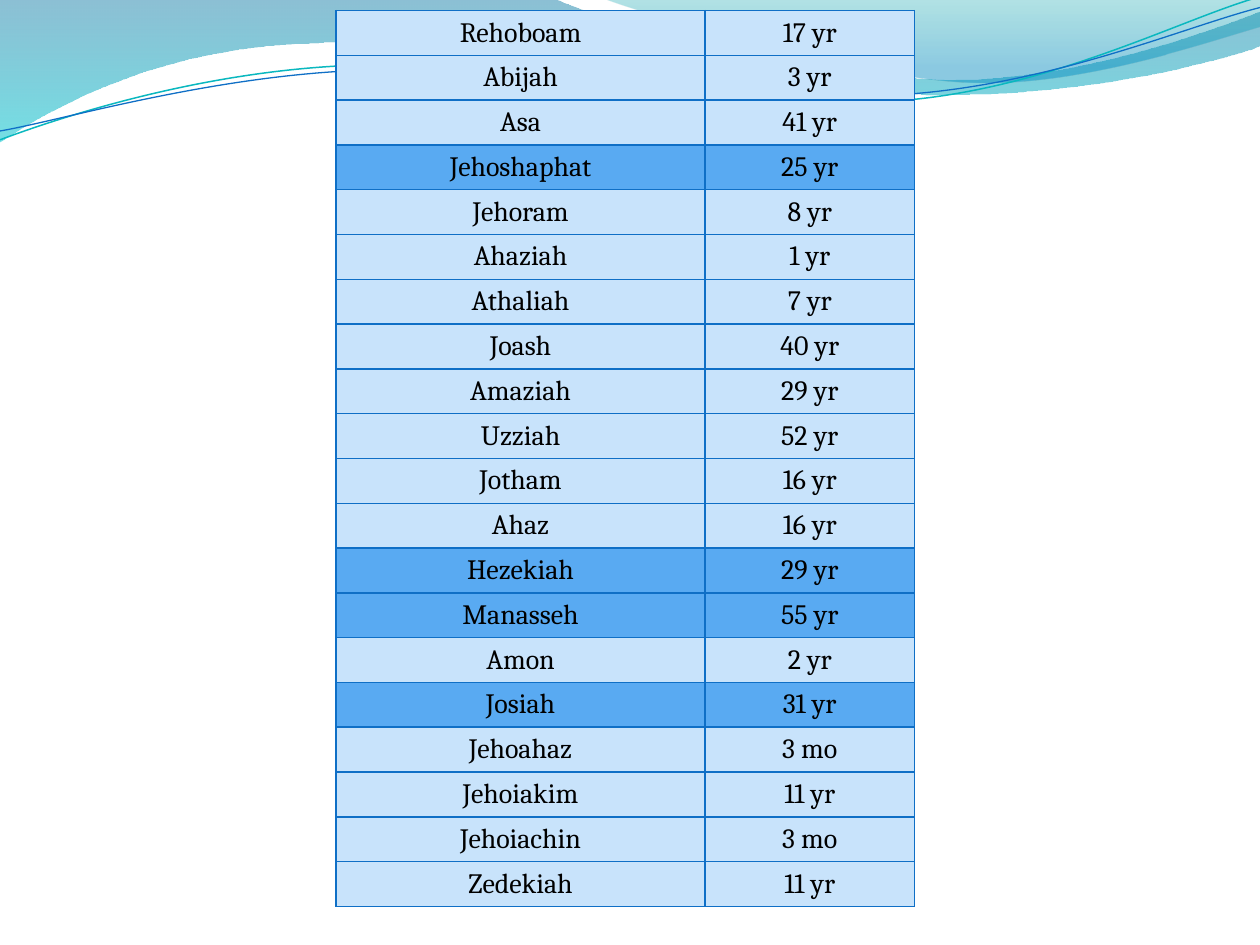
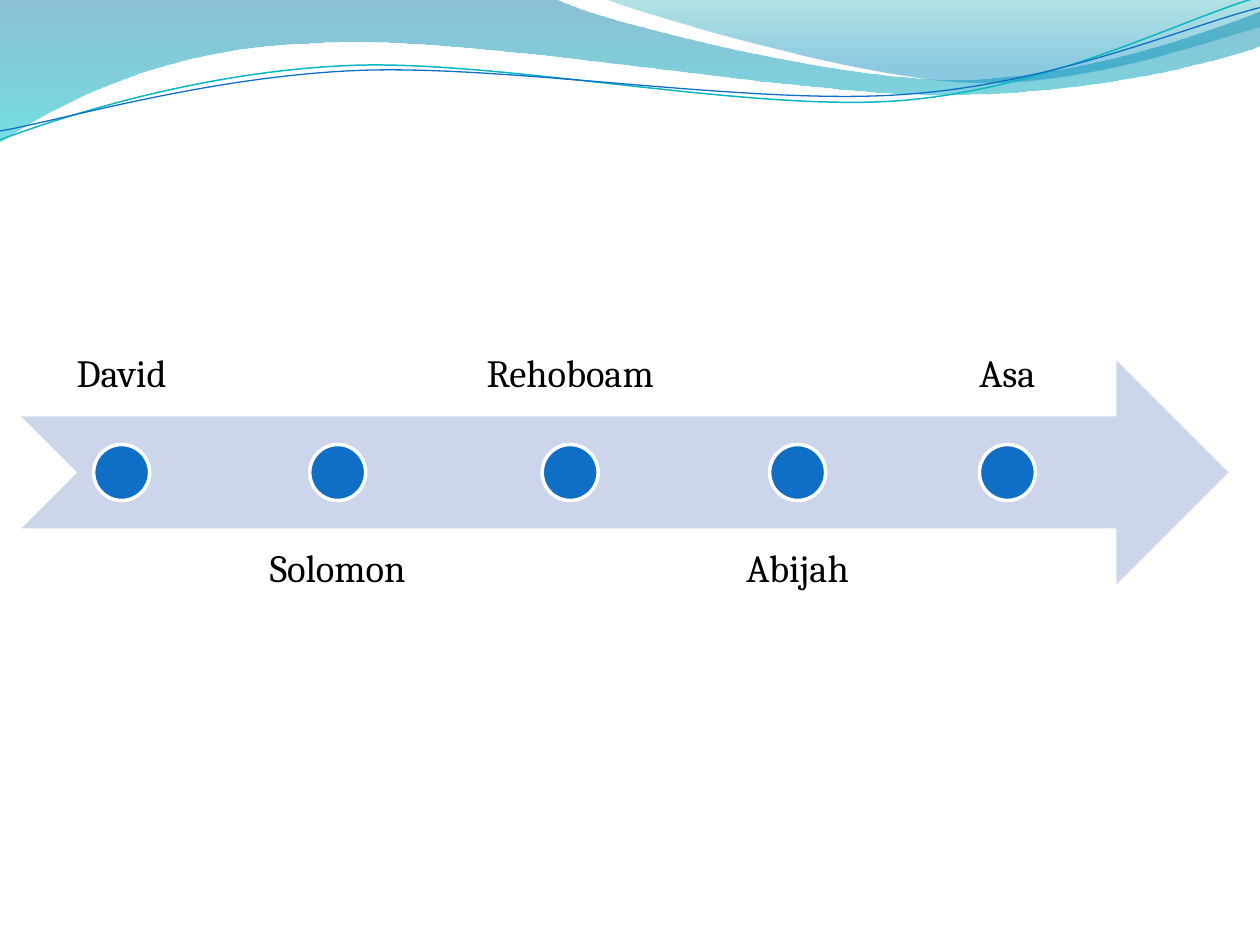
from dataclasses import dataclass
from math import cos, radians, sin

from lxml.etree import SubElement as Sub
from pptx import Presentation
from pptx.dml.color import RGBColor
from pptx.enum.shapes import MSO_SHAPE as Shape
from pptx.enum.text import MSO_ANCHOR as Anchor, PP_ALIGN as Align
from pptx.oxml import parse_xml
from pptx.oxml.ns import nsdecls, qn
from pptx.util import Inches, Pt

BLUE, PALE, MID, BAND = "0F6FC6", "C8E3FB", "59AAF2", "CCD5EA"
BLACK, WHITE = "000000", "FFFFFF"
FONT = "Cambria"
TILT = 2.7  # degrees the thin lines lean to the left
UNIT = 4 / 9  # dot size; the timeline's heights are multiples of it
AXIS = 3.75  # middle of the timeline


@dataclass
class Wave:
    """A start point, then lines (one point) and curves (three points)."""
    start: tuple
    moves: list
    stops: tuple = ()  # position, colour, opacity in percent
    line: str = ""
    width: float = 0
    pivot: tuple = ()  # centre of a tilted line


@dataclass
class King:
    name: str
    left: float
    width: float


WAVES = [
    Wave((0, 0), [
        [(4.4, -0.01)],
        [(4.76, 0.17), (6.64, 0.63), (7.58, 0.63)],
        [(8.53, 0.63), (9.58, 0.26), (10, 0.09)],
        [(10.01, 0.36)],
        [(9.83, 0.44), (8.7, 0.76), (7.46, 0.75)],
        [(6.22, 0.75), (3.82, 0.28), (2.57, 0.34)],
        [(1.29, 0.36), (0.46, 0.83), (-0.01, 1.13)],
        [(0, 0)],
    ], stops=((0, "0074A1", 45), (100, "00C6CF", 55))),
    Wave((4.79, -0.01), [
        [(5.09, 0.11), (6.82, 0.62), (7.69, 0.65)],
        [(8.56, 0.69), (9.61, 0.32), (10, 0.21)],
        [(10, 0)],
        [(4.79, -0.01)],
    ], stops=((0, "00A1A9", 30), (80, "008BBF", 45))),
    Wave((0, 1.11), [
        [(0.48, 0.93), (1.58, 0.57), (2.77, 0.52)],
        [(3.95, 0.47), (5.93, 0.89), (7.13, 0.8)],
        [(8.33, 0.71), (9.38, 0.15), (9.98, -0.02)],
    ], line="0AB8BF", width=0.85, pivot=(4.99, 0.57)),
    Wave((0, 1.04), [
        [(0.47, 0.96), (1.64, 0.61), (2.83, 0.56)],
        [(4.03, 0.51), (5.97, 0.84), (7.17, 0.75)],
        [(8.36, 0.67), (9.41, 0.21), (10, 0.06)],
    ], line=BLUE, width=0.75, pivot=(5, 0.59)),
]

REIGNS = [
    ("Rehoboam", "17 yr"), ("Abijah", "3 yr"), ("Asa", "41 yr"),
    ("Jehoshaphat", "25 yr"), ("Jehoram", "8 yr"), ("Ahaziah", "1 yr"),
    ("Athaliah", "7 yr"), ("Joash", "40 yr"), ("Amaziah", "29 yr"),
    ("Uzziah", "52 yr"), ("Jotham", "16 yr"), ("Ahaz", "16 yr"),
    ("Hezekiah", "29 yr"), ("Manasseh", "55 yr"), ("Amon", "2 yr"),
    ("Josiah", "31 yr"), ("Jehoahaz", "3 mo"), ("Jehoiakim", "11 yr"),
    ("Jehoiachin", "3 mo"), ("Zedekiah", "11 yr"),
]
MARKED = {"Jehoshaphat", "Hezekiah", "Manasseh", "Josiah"}

KINGS = [
    King("David", 0.17, 1.59), King("Solomon", 1.84, 1.68),
    King("Rehoboam", 3.6, 1.85), King("Abijah", 5.64, 1.38),
    King("Asa", 7.2, 1.59),
]


# Shared helpers
def color(code: str) -> RGBColor:
    return RGBColor.from_string(code)


def apply(item, form: dict) -> None:
    for key, value in form.items():
        setattr(item, key, value)


def write(frame, text: str, size: float) -> None:
    para = frame.paragraphs[0]
    para.alignment = Align.CENTER
    run = para.add_run()
    run.text = text
    apply(run.font, {"size": Pt(size), "name": FONT})
    run.font.color.rgb = color(BLACK)


def paint(shape, fill: str = "", line: str = "", width: float = 0) -> None:
    shape.shadow.inherit = False
    if fill:
        shape.fill.solid()
        shape.fill.fore_color.rgb = color(fill)
    else:
        shape.fill.background()
    if line:
        shape.line.color.rgb = color(line)
        shape.line.width = Pt(width)
    else:
        shape.line.fill.background()


# Wave background
def place(point: tuple, pivot: tuple) -> tuple:
    """Turn a point of a tilted line level, and give it as lengths."""
    x, y = point
    if pivot:
        turn = radians(TILT)
        dx, dy = x - pivot[0], y - pivot[1]
        x = pivot[0] + dx * cos(turn) - dy * sin(turn)
        y = pivot[1] + dx * sin(turn) + dy * cos(turn)
    return Inches(x), Inches(y)


def bend(shape, moves: list) -> None:
    """Replace the straight pieces that stand for curves."""
    left, top = shape.left, shape.top
    pieces = list(shape.element.iter(qn("a:lnTo")))
    for piece, move in zip(pieces, moves):
        if len(move) == 3:
            arc = parse_xml(f'<a:cubicBezTo {nsdecls("a")}/>')
            for x, y in move:
                Sub(arc, qn("a:pt"), x=str(x - left), y=str(y - top))
            piece.getparent().replace(piece, arc)


def fade(shape, stops: tuple) -> None:
    shape.fill.gradient()
    shape.fill.gradient_angle = 270
    for stop, (spot, code, _) in zip(shape.fill.gradient_stops, stops):
        stop.position = spot / 100
        stop.color.rgb = color(code)
    for node, (_, _, alpha) in zip(shape.element.iter(qn("a:srgbClr")), stops):
        Sub(node, qn("a:alpha"), val=str(alpha * 1000))


def draw_waves(slide, master) -> None:
    """Draw the waves, then move them to the master for every slide."""
    for wave in WAVES:
        moves = [[place(p, wave.pivot) for p in move] for move in wave.moves]
        build = slide.shapes.build_freeform(*place(wave.start, wave.pivot))
        build.add_line_segments([move[-1] for move in moves],
                                close=bool(wave.stops))
        shape = build.convert_to_shape()
        bend(shape, moves)
        paint(shape, line=wave.line, width=wave.width)
        if wave.stops:
            fade(shape, wave.stops)
        if wave.pivot:
            shape.rotation = 360 - TILT
        master.element.cSld.spTree.append(shape.element)


# Table of reigns
def edge(cell) -> None:
    props = cell._tc.get_or_add_tcPr()
    for spot, side in enumerate("LRTB"):
        props.insert(spot, parse_xml(
            f'<a:ln{side} {nsdecls("a")} w="{Pt(1)}"><a:solidFill>'
            f'<a:srgbClr val="{BLUE}"/></a:solidFill></a:ln{side}>'))


def draw_reigns(slide) -> None:
    frame = slide.shapes.add_table(
        len(REIGNS), 2, Inches(8 / 3), Inches(1 / 12), Inches(4.58),
        Inches(7.33))
    table = frame.table
    apply(table, {"first_row": False, "horz_banding": False})
    for col, width in zip(table.columns, (2.93, 1.66)):
        col.width = Inches(width)
    for row, reign in zip(table.rows, REIGNS):
        row.height = Inches(0.3)
        for cell, text in zip(row.cells, reign):
            write(cell.text_frame, text, 16)
            cell.fill.solid()
            cell.fill.fore_color.rgb = color(MID if reign[0] in MARKED else PALE)
            edge(cell)
    apply(frame, {"width": Inches(4.58), "height": Inches(7.33)})


# Timeline of kings
def draw_king(slide, king: King, above: bool) -> None:
    box = slide.shapes.add_textbox(
        Inches(king.left), Inches(AXIS + (-5 if above else 1) * UNIT),
        Inches(king.width), Inches(4 * UNIT))
    frame = box.text_frame
    pad = Inches(0.17)
    apply(frame, {
        "word_wrap": True,
        "vertical_anchor": Anchor.BOTTOM if above else Anchor.TOP,
        "margin_left": pad, "margin_right": pad,
        "margin_top": pad, "margin_bottom": pad,
    })
    write(frame, king.name, 22)
    frame.paragraphs[0].line_spacing = 0.9
    dot = slide.shapes.add_shape(
        Shape.OVAL, Inches(king.left + (king.width - UNIT) / 2),
        Inches(AXIS - UNIT / 2), Inches(UNIT), Inches(UNIT))
    paint(dot, BLUE, WHITE, 2)


def draw_line(slide) -> None:
    arrow = slide.shapes.add_shape(
        Shape.NOTCHED_RIGHT_ARROW, Inches(0.17), Inches(AXIS - 2 * UNIT),
        Inches(9.58), Inches(4 * UNIT))
    paint(arrow, BAND)
    for spot, king in enumerate(KINGS):
        draw_king(slide, king, above=spot % 2 == 0)


def main() -> None:
    deck = Presentation()
    apply(deck, {"slide_width": Inches(10), "slide_height": Inches(7.5)})
    blank = deck.slide_layouts[6]
    table, chain = (deck.slides.add_slide(blank) for _ in range(2))
    draw_waves(table, deck.slide_master)
    draw_reigns(table)
    draw_line(chain)
    deck.save("out.pptx")


if __name__ == "__main__":
    main()
